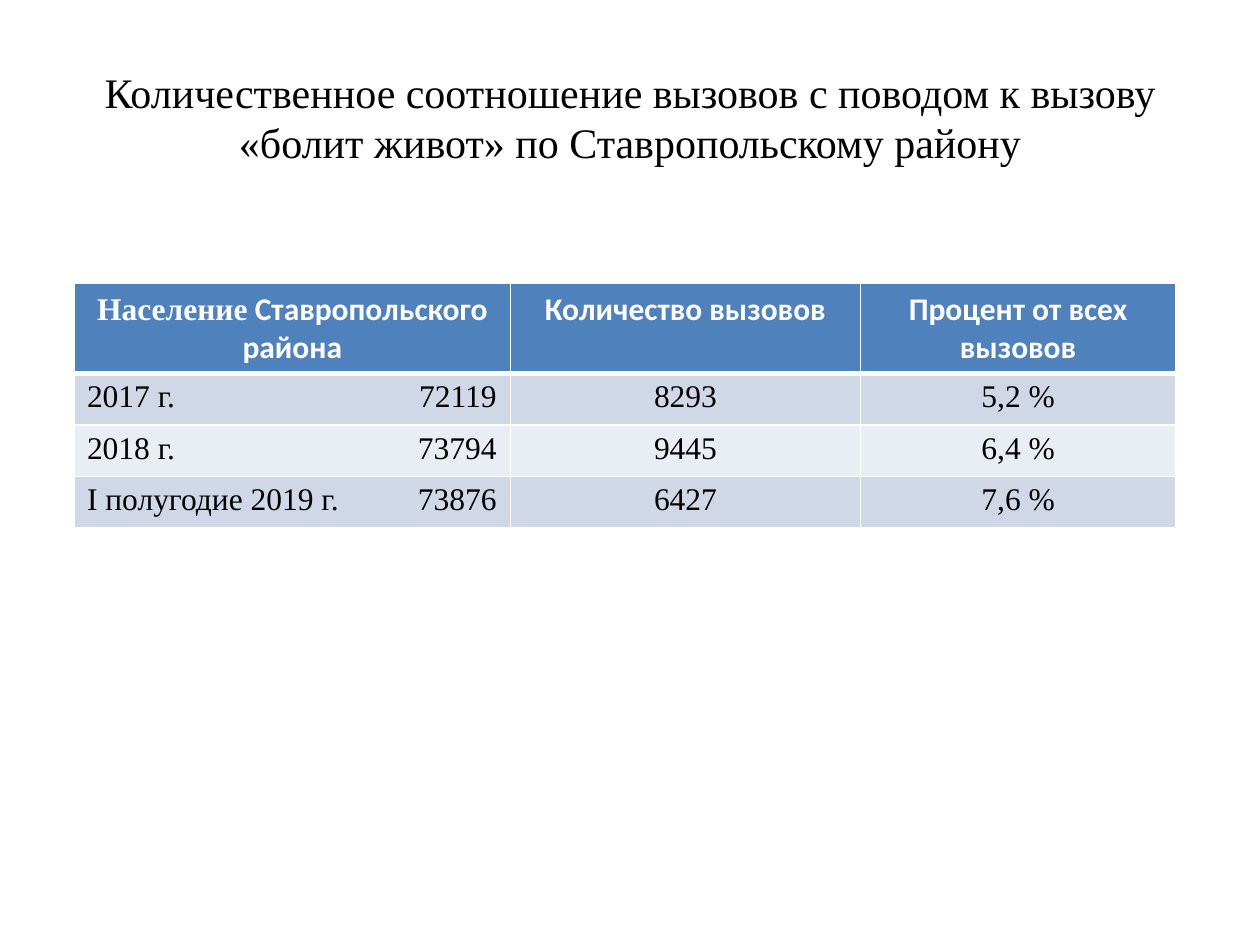
from lxml.etree import SubElement
from pptx import Presentation
from pptx.dml.color import RGBColor
from pptx.enum.text import MSO_ANCHOR, PP_ALIGN
from pptx.oxml.ns import qn
from pptx.util import Cm, Pt

BLACK = RGBColor(0x00, 0x00, 0x00)
WHITE = RGBColor(0xFF, 0xFF, 0xFF)
BLUE = RGBColor(0x4F, 0x81, 0xBD)
BAND_DARK = RGBColor(0xD0, 0xD8, 0xE8)
BAND_LIGHT = RGBColor(0xE9, 0xED, 0xF4)
SERIF, SANS = "Times New Roman", "Calibri"

HEADING = ("Количественное соотношение вызовов с поводом к вызову "
           "«болит живот» по Ставропольскому району")
HEADERS = [
    [("Население", SERIF), (" Ставропольского района", SANS)],
    [("Количество вызовов", SANS)],
    [("Процент от всех вызовов", SANS)],
]
PERIODS = [
    ("2017 г.", "72119", "8293", "5,2 %"),
    ("2018 г.", "73794", "9445", "6,4 %"),
    ("I полугодие 2019 г.", "73876", "6427", "7,6 %"),
]
COLUMN_WIDTHS = [8.79, 7.06, 6.35]
HEADER_HEIGHT, PERIOD_HEIGHT = 1.75, 1.04
POPULATION_TAB = 8.26

HEADING_FORMAT = {"name": SERIF, "size": Pt(24), "bold": False}
HEADER_FORMAT = {"size": Pt(18), "bold": True}
PERIOD_FORMAT = {"size": Pt(18), "bold": False}


def write_runs(paragraph, runs, font_format, color):
    for text, font_name in runs:
        run = paragraph.add_run()
        run.text = text
        for attribute, value in {**font_format, "name": font_name}.items():
            setattr(run.font, attribute, value)
        run.font.color.rgb = color


def add_borders(cell, bottom_width):
    properties = cell._tc.get_or_add_tcPr()
    widths = {"a:lnL": 1, "a:lnR": 1, "a:lnT": 1, "a:lnB": bottom_width}
    for side, width in widths.items():
        line = SubElement(properties, qn(side), w=str(Pt(width)))
        solid = SubElement(line, qn("a:solidFill"))
        SubElement(solid, qn("a:srgbClr"), val=str(WHITE))


def add_right_tab(paragraph, position):
    tabs = SubElement(paragraph._p.get_or_add_pPr(), qn("a:tabLst"))
    SubElement(tabs, qn("a:tab"), pos=str(Cm(position)), algn="r")


def fill_cell(cell, runs, font_format, color, background, bottom_width=1):
    add_borders(cell, bottom_width)
    cell.fill.solid()
    cell.fill.fore_color.rgb = background
    paragraph = cell.text_frame.paragraphs[0]
    paragraph.alignment = PP_ALIGN.CENTER
    write_runs(paragraph, runs, font_format, color)
    return paragraph


def main():
    presentation = Presentation()
    presentation.slide_width, presentation.slide_height = Cm(25.4), Cm(19.05)
    slide = presentation.slides.add_slide(presentation.slide_layouts[5])

    heading = slide.shapes.title
    heading.left, heading.top = Cm(1.27), Cm(0.76)
    heading.width, heading.height = Cm(22.86), Cm(3.18)
    heading.text_frame.vertical_anchor = MSO_ANCHOR.MIDDLE
    heading_line = heading.text_frame.paragraphs[0]
    heading_line.alignment = PP_ALIGN.CENTER
    write_runs(heading_line, [(HEADING, SERIF)], HEADING_FORMAT, BLACK)

    row_heights = [HEADER_HEIGHT] + [PERIOD_HEIGHT] * len(PERIODS)
    calls = slide.shapes.add_table(
        len(row_heights), len(COLUMN_WIDTHS), Cm(1.5), Cm(5.72),
        Cm(sum(COLUMN_WIDTHS)), Cm(sum(row_heights))).table
    for column, width in zip(calls.columns, COLUMN_WIDTHS):
        column.width = Cm(width)
    for row, height in zip(calls.rows, row_heights):
        row.height = Cm(height)

    for column, runs in enumerate(HEADERS):
        fill_cell(calls.cell(0, column), runs, HEADER_FORMAT, WHITE, BLUE, 3)

    for row, (period, population, *figures) in enumerate(PERIODS, start=1):
        band = BAND_DARK if row % 2 else BAND_LIGHT
        for column, text in enumerate([f"{period}\t{population}", *figures]):
            paragraph = fill_cell(calls.cell(row, column), [(text, SERIF)],
                                  PERIOD_FORMAT, BLACK, band, 1)
            if column == 0:
                paragraph.alignment = PP_ALIGN.LEFT
                add_right_tab(paragraph, POPULATION_TAB)

    presentation.save("out.pptx")


if __name__ == "__main__":
    main()
